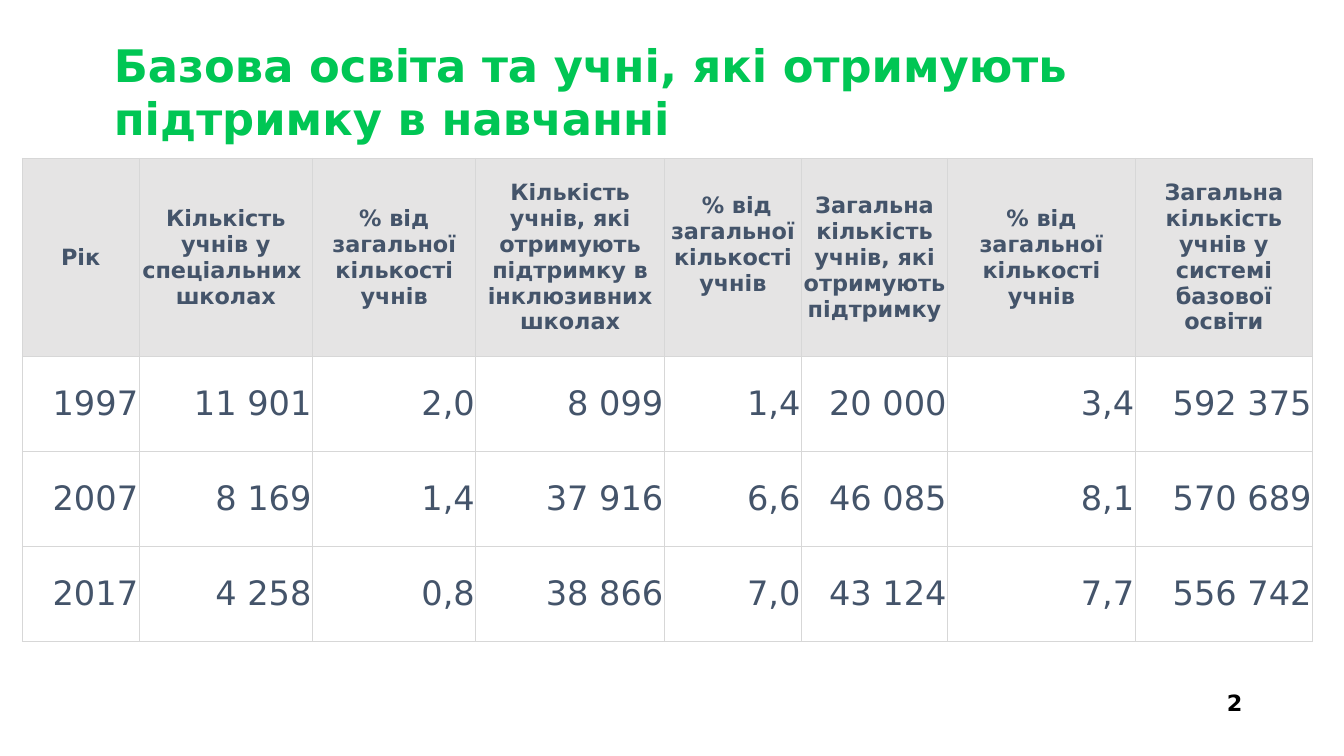
"""Build a slide with a table of pupils who receive learning support."""
from dataclasses import dataclass

from lxml.etree import SubElement
from pptx import Presentation
from pptx.dml.color import RGBColor
from pptx.enum.text import MSO_ANCHOR as Anchor, PP_ALIGN as Align
from pptx.oxml.ns import qn
from pptx.slide import Slide
from pptx.table import _Cell as Cell
from pptx.text.text import TextFrame
from pptx.util import Emu, Pt

EMU_PER_PX = 9144


@dataclass(frozen=True)
class Style:
    size: int
    color: str
    bold: bool
    align: Align


@dataclass(frozen=True)
class Theme:
    font: str = "DejaVu Sans"
    title: Style = Style(32, "00C654", True, Align.LEFT)
    header: Style = Style(16, "44546A", True, Align.CENTER)
    value: Style = Style(24, "44546A", False, Align.RIGHT)
    number: Style = Style(16, "000000", True, Align.RIGHT)
    header_fill: str = "E5E4E4"
    border: str = "D7D7D7"
    border_width: float = 0.75


@dataclass(frozen=True)
class Box:
    left: int
    top: int
    width: int
    height: int


@dataclass(frozen=True)
class Column:
    width: int
    heading: tuple[str, ...]
    values: tuple[str, ...]
    bottom_inset: int = 1


THEME = Theme()
SHARE = "% від загальної кількості учнів"
HEADER_HEIGHT, YEAR_HEIGHT = 197, 94
COLUMNS = (
    Column(116, ("Рік",), ("1997", "2007", "2017")),
    Column(172, ("Кількість учнів у спеціальних ", "школах"),
           ("11 901", "8 169", "4 258")),
    Column(162, (SHARE,), ("2,0", "1,4", "0,8")),
    Column(187, ("Кількість учнів, які отримують підтримку в інклюзивних школах",),
           ("8 099", "37 916", "38 866")),
    Column(136, (" " + SHARE,), ("1,4", "6,6", "7,0"), bottom_inset=27),
    Column(145, ("Загальна кількість учнів, які отримують підтримку",),
           ("20 000", "46 085", "43 124")),
    Column(186, (SHARE,), ("3,4", "8,1", "7,7")),
    Column(176, ("Загальна кількість учнів у системі базової освіти",),
           ("592 375", "570 689", "556 742")),
)


def px(length: int) -> Emu:
    """Turn px into EMU."""
    return Emu(length * EMU_PER_PX)


def place(box: Box) -> tuple[Emu, Emu, Emu, Emu]:
    """Give the position and size of a box in EMU."""
    return px(box.left), px(box.top), px(box.width), px(box.height)


def write(frame: TextFrame, lines: tuple[str, ...], style: Style) -> None:
    """Write one paragraph for each line."""
    frame.word_wrap = True
    for index, line in enumerate(lines):
        paragraph = frame.add_paragraph() if index else frame.paragraphs[0]
        paragraph.alignment = style.align
        run = paragraph.add_run()
        run.text = line
        run.font.name = THEME.font
        run.font.size = Pt(style.size)
        run.font.bold = style.bold
        run.font.color.rgb = RGBColor.from_string(style.color)


def add_text(slide: Slide, box: Box, text: str, style: Style, anchor: Anchor) -> None:
    """Add a text box."""
    frame = slide.shapes.add_textbox(*place(box)).text_frame
    frame.vertical_anchor = anchor
    write(frame, (text,), style)


def add_borders(cell: Cell) -> None:
    """Draw a thin line on each side of a cell."""
    properties = cell._tc.get_or_add_tcPr()
    for side in ("a:lnL", "a:lnR", "a:lnT", "a:lnB"):
        line = SubElement(properties, qn(side), w=str(Pt(THEME.border_width)))
        SubElement(SubElement(line, qn("a:solidFill")), qn("a:srgbClr"), val=THEME.border)


def fill_cell(cell: Cell, lines: tuple[str, ...], style: Style, bottom_inset: int = 1) -> None:
    """Set the text, insets and borders of a cell."""
    cell.margin_left = cell.margin_right = cell.margin_top = px(1)
    cell.margin_bottom = px(bottom_inset)
    cell.vertical_anchor = Anchor.MIDDLE
    write(cell.text_frame, lines, style)
    add_borders(cell)


def add_pupils(slide: Slide, left: int, top: int) -> None:
    """Add the table of pupils by year."""
    heights = (HEADER_HEIGHT,) + (YEAR_HEIGHT,) * len(COLUMNS[0].values)
    box = Box(left, top, sum(column.width for column in COLUMNS), sum(heights))
    pupils = slide.shapes.add_table(len(heights), len(COLUMNS), *place(box)).table
    pupils.first_row = pupils.horz_banding = False
    for row, height in zip(pupils.rows, heights):
        row.height = px(height)
    for index, column in enumerate(COLUMNS):
        pupils.columns[index].width = px(column.width)
        heading = pupils.cell(0, index)
        fill_cell(heading, column.heading, THEME.header, column.bottom_inset)
        heading.fill.solid()
        heading.fill.fore_color.rgb = RGBColor.from_string(THEME.header_fill)
        for year, value in enumerate(column.values, start=1):
            cell = pupils.cell(year, index)
            fill_cell(cell, (value,), THEME.value)
            cell.fill.background()


def main() -> None:
    """Build and save the slide."""
    deck = Presentation()
    deck.slide_width, deck.slide_height = px(1333), px(750)
    slide = deck.slides.add_slide(deck.slide_layouts[6])
    add_text(slide, Box(1158, 677, 84, 40), "2", THEME.number, Anchor.MIDDLE)
    add_pupils(slide, 22, 157)
    add_text(slide, Box(103, 32, 1219, 118),
             "Базова освіта та учні, які отримують підтримку в навчанні",
             THEME.title, Anchor.TOP)
    deck.save("out.pptx")


if __name__ == "__main__":
    main()
